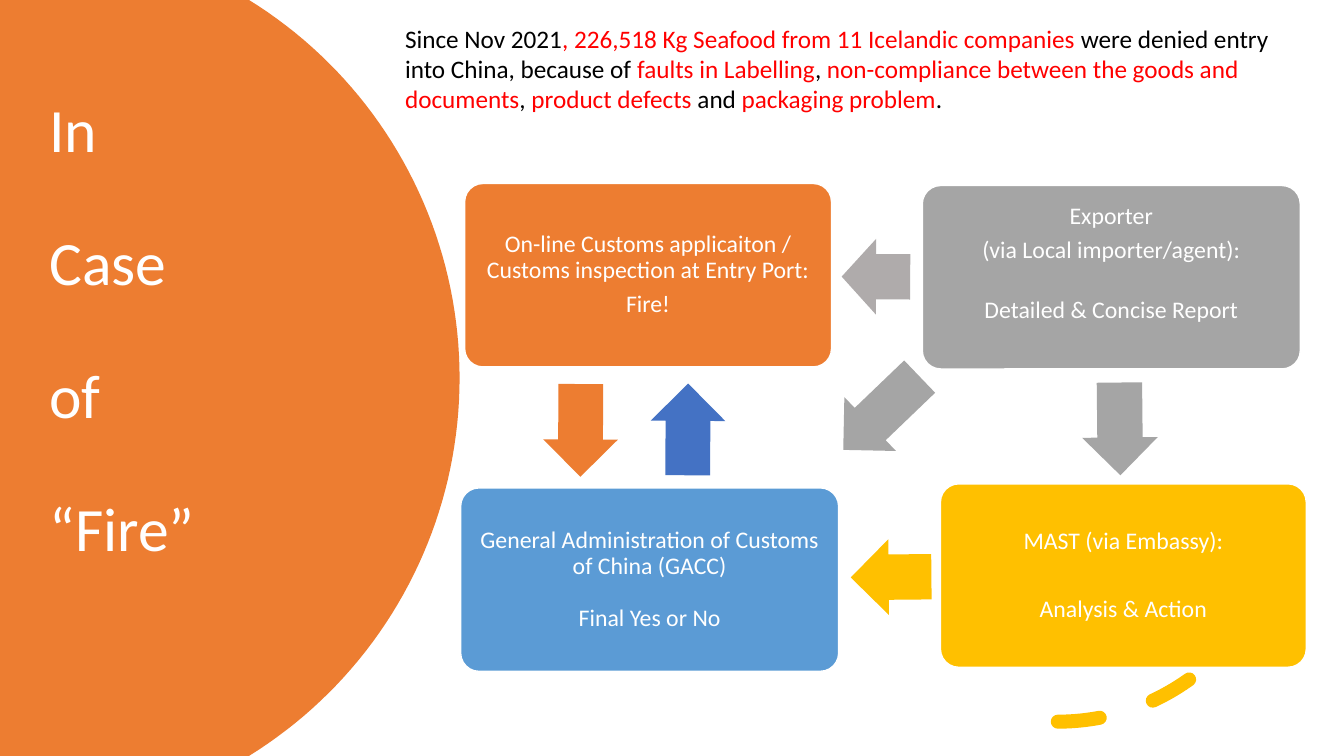
from dataclasses import dataclass
from math import asin, cos, sin

from pptx import Presentation
from pptx.dml.color import RGBColor
from pptx.enum.dml import MSO_LINE
from pptx.enum.shapes import MSO_SHAPE
from pptx.enum.text import MSO_ANCHOR, MSO_AUTO_SIZE, PP_ALIGN
from pptx.shapes.autoshape import Shape
from pptx.slide import Slide
from pptx.text.text import Font
from pptx.util import Pt

SLIDE_WIDTH, SLIDE_HEIGHT = 960, 540
ORANGE, GRAY, YELLOW, BLUE = "ED7D31", "A5A5A5", "FFC000", "5B9BD5"
WHITE, BLACK, RED = "FFFFFF", "000000", "FF0000"
PARTY_HEIGHT = 131.04
PARTY_INSET = 5
PARAGRAPH_GAP = 5.95
BLANK_LINE = 18.6


@dataclass
class Line:
    text: str
    gap_before: float = 0


@dataclass
class Party:
    left: float
    top: float
    width: float
    color: str
    lines: list[Line]
    extra_bottom: float = 0


@dataclass
class Arrow:
    left: float
    top: float
    length: float
    breadth: float
    rotation: float
    color: str


PARTIES = [
    Party(331.92, 131.04, 262.08, ORANGE, [
        Line("On-line Customs applicaiton /\vCustoms inspection at Entry Port:"),
        Line("Fire!", PARAGRAPH_GAP),
    ]),
    Party(658.8, 132.48, 270, GRAY, [
        Line("Exporter"),
        Line("(via Local importer/agent):", PARAGRAPH_GAP),
        Line("Detailed & Concise Report", PARAGRAPH_GAP + BLANK_LINE),
    ], extra_bottom=BLANK_LINE),
    Party(671.76, 345.6, 261.36, YELLOW, [
        Line("MAST (via Embassy):"),
        Line("Analysis & Action", 2 * PARAGRAPH_GAP + BLANK_LINE),
    ]),
    Party(329.04, 348.48, 270, BLUE, [
        Line("General Administration of Customs of China (GACC)"),
        Line("Final Yes or No", BLANK_LINE),
    ]),
]

ARROWS = [
    Arrow(601.2, 170.64, 48.96, 54, 180.2, "AFABAB"),
    Arrow(766.8, 279.36, 66.24, 54, 89.4, GRAY),
    Arrow(607.68, 385.2, 57.6, 54, 179.5, YELLOW),
    Arrow(591.84, 268.56, 75.6, 53.28, 136.2, GRAY),
    Arrow(458.64, 280.08, 65.52, 53.28, 270.3, "4472C4"),
    Arrow(381.6, 280.8, 66.24, 53.28, 90.3, ORANGE),
]

DENIALS = [
    ("Since Nov 2021", BLACK),
    (", 226,518 Kg Seafood from 11 Icelandic companies ", RED),
    ("were denied entry into China, because of ", BLACK),
    ("faults in Labelling", RED),
    (", ", BLACK),
    ("non-compliance between the goods and documents", RED),
    (", ", BLACK),
    ("product defects ", RED),
    ("and ", BLACK),
    ("packaging problem", RED),
    (".", BLACK),
]


def rgb(color: str) -> RGBColor:
    return RGBColor.from_string(color)


def style_font(font: Font, size: float, color: str) -> None:
    font.name = "Calibri"
    font.size = Pt(size)
    font.color.rgb = rgb(color)


def paint(shape: Shape, color: str) -> None:
    """Give a shape a flat fill with no outline or shadow."""
    shape.shadow.inherit = False
    shape.fill.solid()
    shape.fill.fore_color.rgb = rgb(color)
    shape.line.fill.background()


def write_lines(shape: Shape, lines: list[Line], size: float, align: PP_ALIGN) -> None:
    frame = shape.text_frame
    frame.word_wrap = True
    frame.vertical_anchor = MSO_ANCHOR.MIDDLE
    for index, line in enumerate(lines):
        paragraph = frame.paragraphs[0] if index == 0 else frame.add_paragraph()
        paragraph.text = line.text
        paragraph.alignment = align
        paragraph.line_spacing = 0.9
        paragraph.space_before = Pt(line.gap_before)
        for run in paragraph.runs:
            style_font(run.font, size, WHITE)


def add_title_panel(slide: Slide) -> None:
    """Draw the round-edged panel with the title on top of it."""
    radius, center_x, center_y = 317.5, 10.8, SLIDE_HEIGHT / 2
    half_angle = asin(center_y / radius)
    steps = 80
    angles = [half_angle * (2 * step / steps - 1) for step in range(steps + 1)]
    edge = [(Pt(center_x + radius * cos(angle)), Pt(center_y + radius * sin(angle)))
            for angle in angles]
    builder = slide.shapes.build_freeform(0, 0)
    builder.add_line_segments(edge + [(0, Pt(SLIDE_HEIGHT))], close=True)
    panel = builder.convert_to_shape()
    paint(panel, ORANGE)

    title = slide.shapes.title
    title.left, title.top, title.width, title.height = (
        Pt(28.08), Pt(61.2), Pt(165.6), Pt(351.36))
    words = ["In", "Case", "of", "“Fire”"]
    lines = [Line(word, 47.5 if index else 0) for index, word in enumerate(words)]
    write_lines(title, lines, 44, PP_ALIGN.LEFT)
    title.text_frame.auto_size = MSO_AUTO_SIZE.NONE
    title.element.addprevious(panel.element)


def add_dashed_arc(slide: Slide) -> None:
    arc = slide.shapes.add_shape(
        MSO_SHAPE.ARC, Pt(594.72), Pt(193.68), Pt(321.84), Pt(321.84))
    arc.shadow.inherit = False
    arc.fill.background()
    arc.line.color.rgb = rgb(YELLOW)
    arc.line.width = Pt(10)
    arc.line.dash_style = MSO_LINE.DASH
    arc.element.spPr.ln.set("cap", "rnd")
    arc.element.spPr.xfrm.set("flipV", "1")


def add_party(slide: Slide, party: Party) -> None:
    box = slide.shapes.add_shape(
        MSO_SHAPE.ROUNDED_RECTANGLE, Pt(party.left), Pt(party.top),
        Pt(party.width), Pt(PARTY_HEIGHT))
    box.adjustments[0] = 0.1
    paint(box, party.color)
    box.line.color.rgb = rgb(WHITE)
    box.line.width = Pt(1)
    frame = box.text_frame
    frame.margin_left = frame.margin_right = frame.margin_top = Pt(PARTY_INSET)
    frame.margin_bottom = Pt(PARTY_INSET + party.extra_bottom)
    write_lines(box, party.lines, 17, PP_ALIGN.CENTER)


def add_arrow(slide: Slide, arrow: Arrow) -> None:
    shape = slide.shapes.add_shape(
        MSO_SHAPE.RIGHT_ARROW, Pt(arrow.left), Pt(arrow.top),
        Pt(arrow.length), Pt(arrow.breadth))
    shape.adjustments[0] = 0.6
    shape.adjustments[1] = 0.5
    shape.rotation = arrow.rotation
    paint(shape, arrow.color)


def add_denials(slide: Slide) -> None:
    denials = slide.shapes.add_textbox(Pt(282.24), Pt(12.96), Pt(653.76), Pt(72.72))
    denials.text_frame.word_wrap = True
    paragraph = denials.text_frame.paragraphs[0]
    for text, color in DENIALS:
        run = paragraph.add_run()
        run.text = text
        style_font(run.font, 18, color)


def main() -> None:
    presentation = Presentation()
    presentation.slide_width = Pt(SLIDE_WIDTH)
    presentation.slide_height = Pt(SLIDE_HEIGHT)
    slide = presentation.slides.add_slide(
        presentation.slide_layouts.get_by_name("Title Only"))
    add_title_panel(slide)
    add_dashed_arc(slide)
    for party in PARTIES:
        add_party(slide, party)
    for arrow in ARROWS:
        add_arrow(slide, arrow)
    add_denials(slide)
    presentation.save("out.pptx")


if __name__ == "__main__":
    main()
